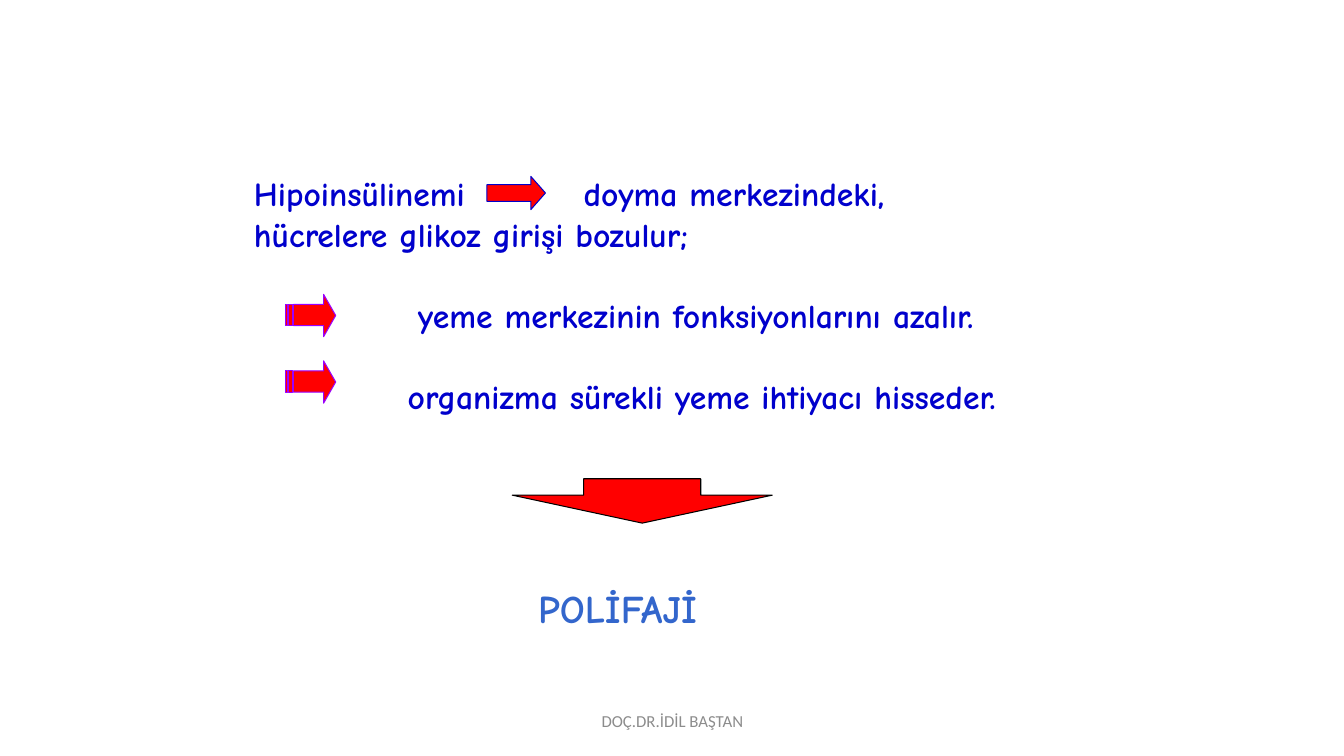
from lxml import etree
from pptx import Presentation
from pptx.dml.color import RGBColor
from pptx.enum.shapes import MSO_SHAPE
from pptx.enum.text import MSO_ANCHOR, PP_ALIGN
from pptx.oxml.ns import qn
from pptx.util import Inches, Pt

LEFT, CENTER = PP_ALIGN.LEFT, PP_ALIGN.CENTER
TOP, MIDDLE = MSO_ANCHOR.TOP, MSO_ANCHOR.MIDDLE
RIGHT_ARROW, DOWN_ARROW = MSO_SHAPE.RIGHT_ARROW, MSO_SHAPE.DOWN_ARROW
COLORS = {
    "body": "0000CC",
    "result": "3366CC",
    "footer": "8C8C8C",
    "arrow": "FF0000",
    "stripe_line": "9900FF",
    "black": "000000",
}


def add_text(paragraphs, box, size, color, font="Comic Neue", bold=True,
             anchor=TOP, wrap=True, tab_stop=None):
    shape = slide.shapes.add_textbox(*map(Inches, box))
    frame = shape.text_frame
    frame.word_wrap = wrap
    frame.vertical_anchor = anchor
    for index, (text, alignment, space_before) in enumerate(paragraphs):
        paragraph = frame.paragraphs[0] if index == 0 else frame.add_paragraph()
        paragraph.text = text
        paragraph.alignment = alignment
        if space_before:
            paragraph.space_before = Pt(space_before)
        if "\t" in text:
            tabs = etree.SubElement(paragraph._p.get_or_add_pPr(), qn("a:tabLst"))
            etree.SubElement(tabs, qn("a:tab"), pos=str(Inches(tab_stop)), algn="l")
        for run in paragraph.runs:
            run.font.name = font
            run.font.size = Pt(size)
            run.font.bold = bold
            run.font.color.rgb = RGBColor.from_string(COLORS[color])


def style_arrow(shape, line_color):
    shape.shadow.inherit = False
    shape.fill.solid()
    shape.fill.fore_color.rgb = RGBColor.from_string(COLORS["arrow"])
    shape.line.color.rgb = RGBColor.from_string(COLORS[line_color])
    shape.line.width = Pt(0.75)


presentation = Presentation()
presentation.slide_width = Inches(13.33)
presentation.slide_height = Inches(7.5)
slide = presentation.slides.add_slide(presentation.slide_layouts[6])

add_text(
    [
        ("Hipoinsülinemi\tdoyma merkezindeki,", LEFT, 0),
        ("hücrelere glikoz girişi bozulur;", LEFT, 0),
        ("yeme merkezinin fonksiyonlarını azalır. ", CENTER, 29),
        ("organizma sürekli yeme ihtiyacı hisseder.", CENTER, 29),
    ],
    (2.42, 1.67, 9.08, 2.52), 24, "body", tab_stop=3.27,
)

for kind, box, adjustments, line_color in [
    (RIGHT_ARROW, (4.83, 1.75, 0.58, 0.33), (0.5, 0.44), "body"),
    (DOWN_ARROW, (5.08, 4.75, 2.58, 0.44), (0.45, 0.63), "black"),
]:
    arrow = slide.shapes.add_shape(kind, *map(Inches, box))
    for index, value in enumerate(adjustments):
        arrow.adjustments[index] = value
    style_arrow(arrow, line_color)

STRIPED_ARROW = [
    [(0.38, 0), (0.38, 0.1), (0.08, 0.1), (0.08, 0.31),
     (0.38, 0.31), (0.38, 0.42), (0.5, 0.21)],
    [(0.03, 0.1), (0.03, 0.31), (0.07, 0.31), (0.07, 0.1)],
    [(0, 0.1), (0, 0.31), (0.02, 0.31), (0.02, 0.1)],
]
for top in (2.92, 3.58):
    contours = [[(Inches(2.83 + x), Inches(top + y)) for x, y in contour]
                for contour in STRIPED_ARROW]
    builder = slide.shapes.build_freeform(*contours[0][0])
    builder.add_line_segments(contours[0][1:], close=True)
    for contour in contours[1:]:
        builder.move_to(*contour[0])
        builder.add_line_segments(contour[1:], close=True)
    style_arrow(builder.convert_to_shape(), "stripe_line")

add_text([("POLİFAJİ", LEFT, 0)], (5.24, 5.75, 1.94, 0.57), 28, "result", wrap=False)
add_text([("DOÇ.DR.İDİL BAŞTAN", CENTER, 0)], (4.42, 6.95, 4.5, 0.4), 12, "footer",
         font="Calibri", bold=False, anchor=MIDDLE)

presentation.save("out.pptx")
